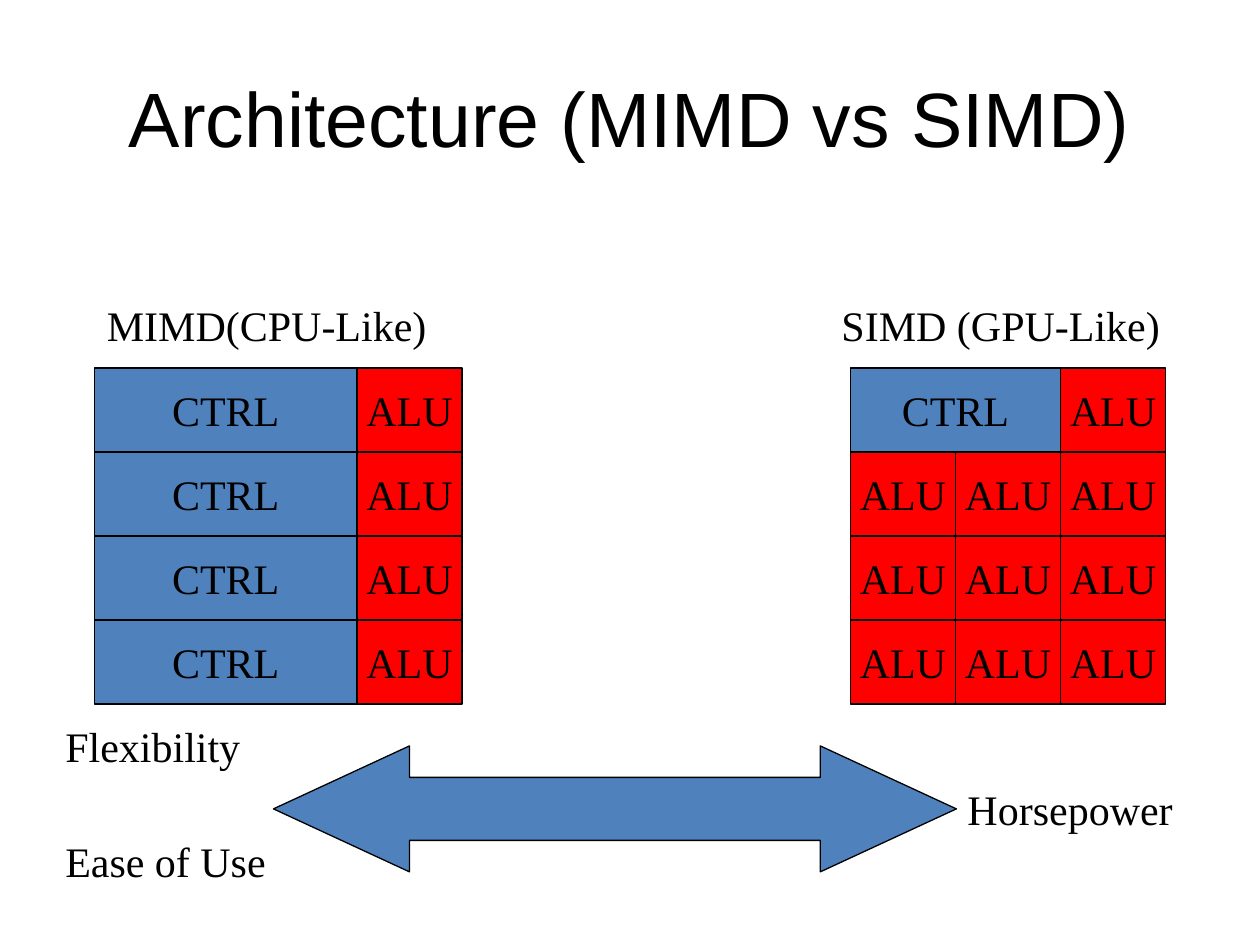
from pptx import Presentation
from pptx.dml.color import RGBColor
from pptx.enum import shapes, text
from pptx.util import Inches, Pt

TITLE = "Architecture (MIMD vs SIMD)"
BLACK, BLUE, RED = "000000", "4F81BD", "FF0000"
SERIF = "Times New Roman"
FILLS = {"CTRL": BLUE, "ALU": RED}

# Each cell is (name, width in ALU units)
ALU = ("ALU", 1)
GRIDS = [
    (0.75, [[("CTRL", 2.5), ALU]] * 4),
    (6.75, [[("CTRL", 2), ALU]] + [[ALU] * 3] * 3),
]
LABELS = [
    ("MIMD(CPU-Like)", 0.75, 2.33, 3.42),
    ("SIMD (GPU-Like)", 6.58, 2.33, 3.42),
    ("Flexibility", 0.42, 5.67, 1.75),
    ("Horsepower", 7.58, 6.17, 2.25),
    ("Ease of Use", 0.42, 6.58, 2),
]
TOP, UNIT, ROW = 2.92, 2.5 / 3, 2 / 3


def color(code):
    return RGBColor.from_string(code)


def write(frame, words, font=SERIF, size=24, align=text.PP_ALIGN.LEFT):
    frame.text = words
    para = frame.paragraphs[0]
    para.alignment = align
    face = para.runs[0].font
    face.name, face.size = font, Pt(size)
    face.color.rgb = color(BLACK)


def draw(slide, kind, box, fill):
    shape = slide.shapes.add_shape(kind, *map(Inches, box))
    shape.shadow.inherit = False
    shape.fill.solid()
    shape.fill.fore_color.rgb = color(fill)
    shape.line.color.rgb = color(BLACK)
    shape.line.width = Pt(0.75)
    return shape


def add_grid(slide, left, rows):
    for i, row in enumerate(rows):
        x = left
        for name, span in row:
            box = (x, TOP + i * ROW, span * UNIT, ROW)
            cell = draw(slide, shapes.MSO_SHAPE.RECTANGLE, box, FILLS[name])
            frame = cell.text_frame
            frame.word_wrap = False
            frame.vertical_anchor = text.MSO_ANCHOR.MIDDLE
            write(frame, name, align=text.PP_ALIGN.CENTER)
            x += span * UNIT


def main():
    deck = Presentation()
    deck.slide_width, deck.slide_height = Inches(10), Inches(7.5)
    slide = deck.slides.add_slide(deck.slide_layouts[5])

    title = slide.shapes.title
    title.left, title.top = Inches(0.5), Inches(0.3)
    title.width, title.height = Inches(9), Inches(1.25)
    title.text_frame.vertical_anchor = text.MSO_ANCHOR.MIDDLE
    write(title.text_frame, TITLE, "Arial", 44, text.PP_ALIGN.CENTER)

    for left, rows in GRIDS:
        add_grid(slide, left, rows)

    arrow = draw(slide, shapes.MSO_SHAPE.LEFT_RIGHT_ARROW,
                 (2.17, 5.92, 5.42, 1), BLUE)
    arrow.adjustments[0] = 0.5
    arrow.adjustments[1] = 1.08

    for words, x, y, width in LABELS:
        box = slide.shapes.add_textbox(*map(Inches, (x, y, width, 0.5)))
        box.text_frame.word_wrap = True
        write(box.text_frame, words)

    deck.save("out.pptx")


if __name__ == "__main__":
    main()
